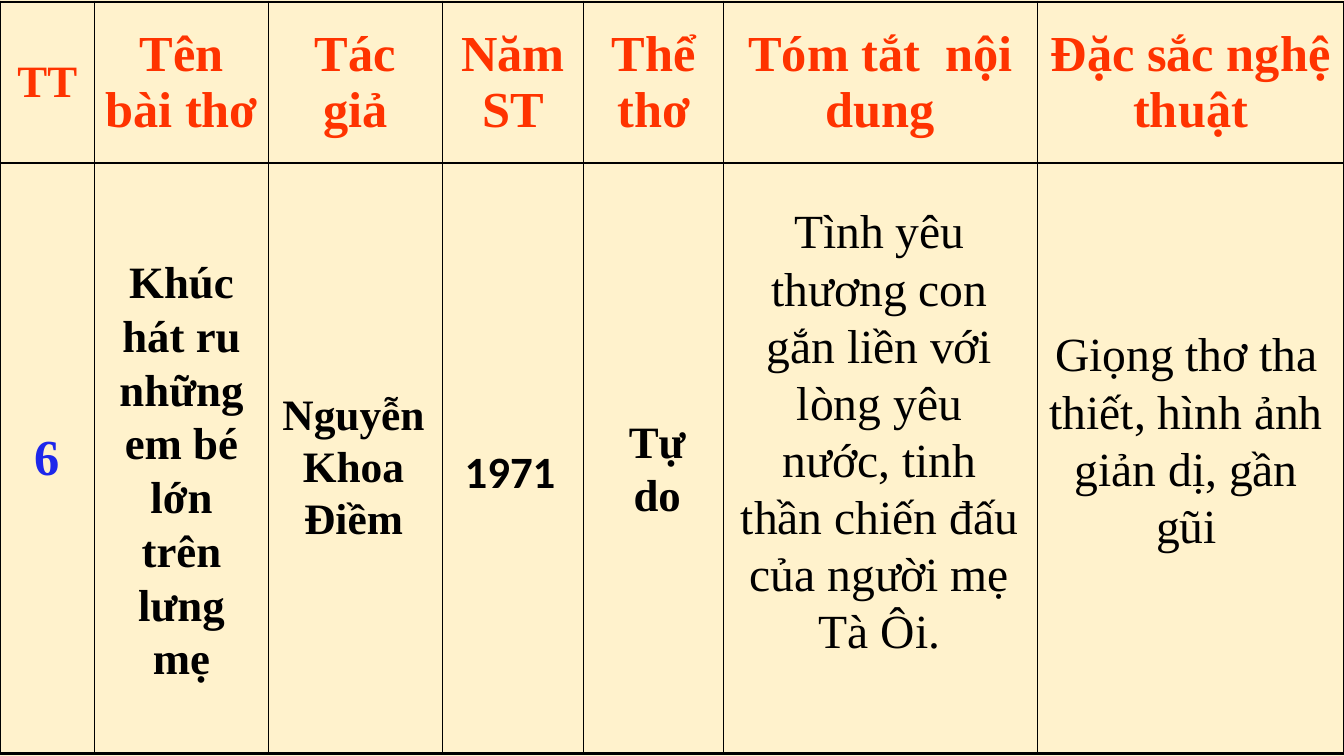
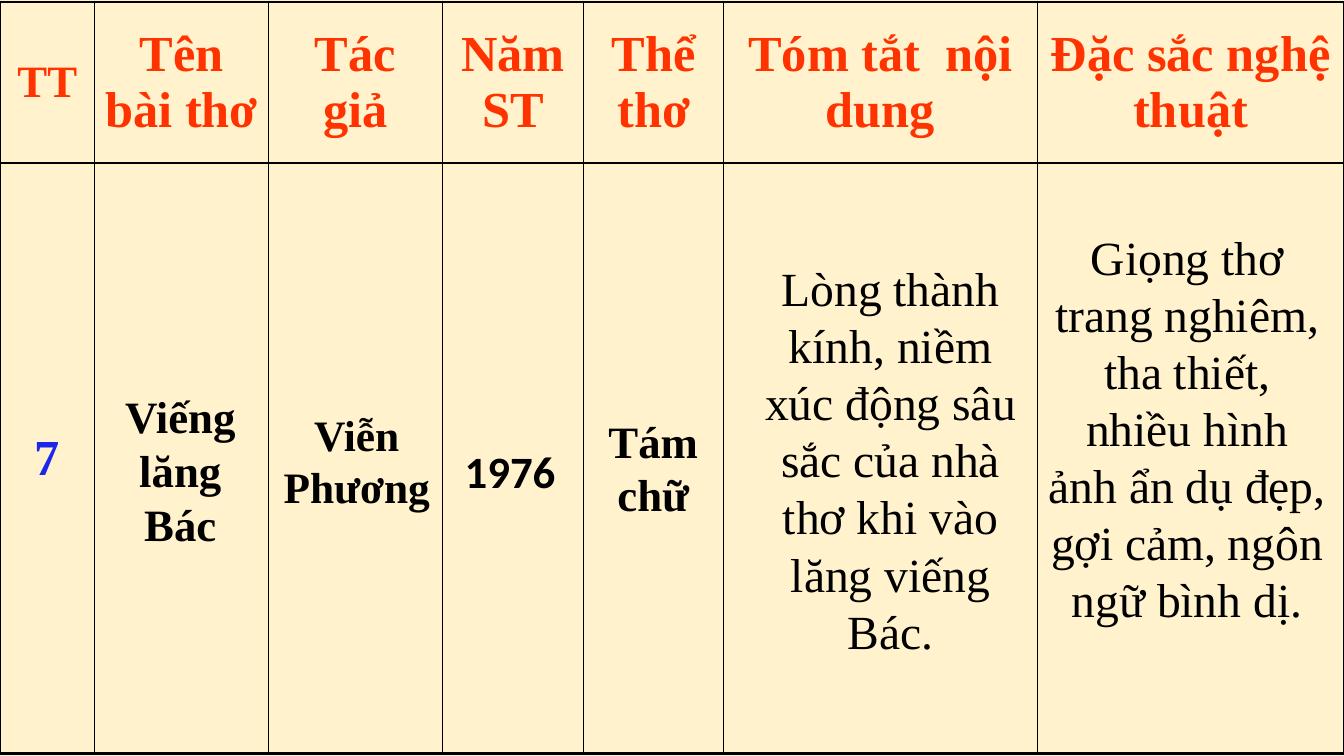
from dataclasses import dataclass

from lxml import etree
from pptx import Presentation
from pptx.dml.color import RGBColor
from pptx.enum.text import MSO_ANCHOR, MSO_AUTO_SIZE, PP_ALIGN
from pptx.oxml.ns import qn
from pptx.util import Cm, Pt

CENTER, LEFT = PP_ALIGN.CENTER, PP_ALIGN.LEFT
MIDDLE = MSO_ANCHOR.MIDDLE
FIT_SHAPE = MSO_AUTO_SIZE.SHAPE_TO_FIT_TEXT


@dataclass(frozen=True)
class Theme:
    """Colours, fonts, type sizes and line widths of the deck."""
    paper: str = "FFF2CC"
    ink: str = "000000"
    heading: str = "FF3300"
    number: str = "1D27EB"
    serif: str = "Times New Roman"
    sans: str = "Calibri"
    heading_size: float = 36
    label_size: float = 32
    author_size: float = 31
    body_size: float = 34
    space_before: float = 6
    inner_line: float = 1
    outer_line: float = 2.25


@dataclass(frozen=True)
class Style:
    """How the text of one column is set."""
    width: float
    size: float
    font: str = Theme.serif
    bold: bool = True
    align: PP_ALIGN = CENTER
    space_before: float = Theme.space_before
    wrap: bool = True


THEME = Theme()
SLIDE_WIDTH, SLIDE_HEIGHT = 33.87, 19.05
TABLE_TOP = 0.05
COLUMN_WIDTHS = (2.39, 4.37, 4.39, 3.56, 3.53, 7.9, 7.73)
ROW_HEIGHTS = (4.06, 14.88)
HEADINGS = ("TT", "Tên bài thơ", "Tác giả", "Năm ST", "Thể thơ",
            "Tóm tắt  nội dung", "Đặc sắc nghệ thuật")

STYLES = (
    Style(4.17, THEME.label_size),
    Style(4.62, THEME.author_size),
    Style(2.82, THEME.label_size, THEME.sans, align=LEFT, wrap=False),
    Style(3.05, THEME.label_size),
    Style(7.65, THEME.body_size, bold=False, space_before=0),
    Style(7.52, THEME.body_size, bold=False, space_before=0),
)

POEMS = {
    "6": (
        (2.49, 6.27, 11.2, "Khúc hát ru những em bé lớn trên lưng mẹ"),
        (6.6, 9.63, 4.37, "Nguyễn Khoa Điềm"),
        (11.46, 11.05, 1.63, "1971"),
        (15.04, 10.29, 3, "Tự do"),
        (18.34, 4.95, 11.89, "Tình yêu thương con gắn liền với lòng yêu nước, "
                             "tinh thần chiến đấu của người mẹ Tà Ôi."),
        (26.14, 8.05, 6.07, "Giọng thơ tha thiết, hình ảnh giản dị, gần gũi"),
    ),
    "7": (
        (2.46, 9.68, 4.37, "Viếng lăng Bác"),
        (6.68, 10.16, 2.9, "Viễn Phương"),
        (11.46, 11.05, 1.63, "1976"),
        (14.94, 10.29, 3, "Tám chữ"),
        (18.62, 6.4, 10.44, "Lòng thành kính, niềm xúc động sâu sắc của nhà "
                            "thơ khi vào lăng viếng Bác."),
        (26.16, 5.61, 11.89, "Giọng thơ trang nghiêm, tha thiết, nhiều hình ảnh "
                             "ẩn dụ đẹp, gợi cảm, ngôn ngữ bình dị."),
    ),
}


def write_text(text_frame, text, size, color, font=THEME.serif, bold=True,
               align=CENTER, space_before=THEME.space_before):
    """Fill a text frame with one formatted paragraph."""
    text_frame.text = text
    paragraph = text_frame.paragraphs[0]
    paragraph.alignment = align
    paragraph.space_before = Pt(space_before)
    run_font = paragraph.runs[0].font
    run_font.name, run_font.size, run_font.bold = font, Pt(size), bold
    run_font.color.rgb = RGBColor.from_string(color)


def set_borders(cell, widths):
    """Draw the four sides of a cell, given widths in points by side."""
    properties = cell._tc.get_or_add_tcPr()
    for side in "LRTB":
        line = etree.SubElement(properties, qn(f"a:ln{side}"), w=str(Pt(widths[side])))
        fill = etree.SubElement(line, qn("a:solidFill"))
        etree.SubElement(fill, qn("a:srgbClr"), val=THEME.ink)


def format_cell(cell, row, column):
    """Make a cell clear and centred, with heavier lines at the table edge."""
    at_edge = {
        "L": column == 0,
        "R": column == len(COLUMN_WIDTHS) - 1,
        "T": row == 0,
        "B": row == len(ROW_HEIGHTS) - 1,
    }
    set_borders(cell, {side: THEME.outer_line if edge else THEME.inner_line
                       for side, edge in at_edge.items()})
    cell.fill.background()
    cell.vertical_anchor = MIDDLE


def add_poem_table(slide, number):
    """Add the full-slide table with its headings and the poem's number."""
    table = slide.shapes.add_table(
        len(ROW_HEIGHTS), len(COLUMN_WIDTHS), Cm(0), Cm(TABLE_TOP),
        Cm(sum(COLUMN_WIDTHS)), Cm(sum(ROW_HEIGHTS))).table
    table.first_row = table.horz_banding = False
    for column, width in zip(table.columns, COLUMN_WIDTHS):
        column.width = Cm(width)
    for row, height in zip(table.rows, ROW_HEIGHTS):
        row.height = Cm(height)
    for row in range(len(ROW_HEIGHTS)):
        for column in range(len(COLUMN_WIDTHS)):
            format_cell(table.cell(row, column), row, column)
    for column, heading in enumerate(HEADINGS):
        size = THEME.heading_size if column else THEME.label_size
        write_text(table.cell(0, column).text_frame, heading, size, THEME.heading)
    write_text(table.cell(1, 0).text_frame, number, THEME.heading_size, THEME.number)


def add_entry(slide, style, left, top, height, text):
    """Add the text of one column over the poem's row."""
    text_box = slide.shapes.add_textbox(Cm(left), Cm(top), Cm(style.width), Cm(height))
    text_frame = text_box.text_frame
    text_frame.word_wrap = style.wrap
    text_frame.auto_size = FIT_SHAPE
    write_text(text_frame, text, style.size, THEME.ink, style.font, style.bold,
               style.align, style.space_before)


def add_poem_slide(presentation, number, entries):
    """Add one slide that sums up a poem."""
    slide = presentation.slides.add_slide(presentation.slide_layouts.get_by_name("Blank"))
    add_poem_table(slide, number)
    for style, entry in zip(STYLES, entries):
        add_entry(slide, style, *entry)


def main():
    """Build and save the presentation."""
    presentation = Presentation()
    presentation.slide_width = Cm(SLIDE_WIDTH)
    presentation.slide_height = Cm(SLIDE_HEIGHT)
    background = presentation.slide_master.background.fill
    background.solid()
    background.fore_color.rgb = RGBColor.from_string(THEME.paper)
    for number, entries in POEMS.items():
        add_poem_slide(presentation, number, entries)
    presentation.save("out.pptx")


if __name__ == "__main__":
    main()
